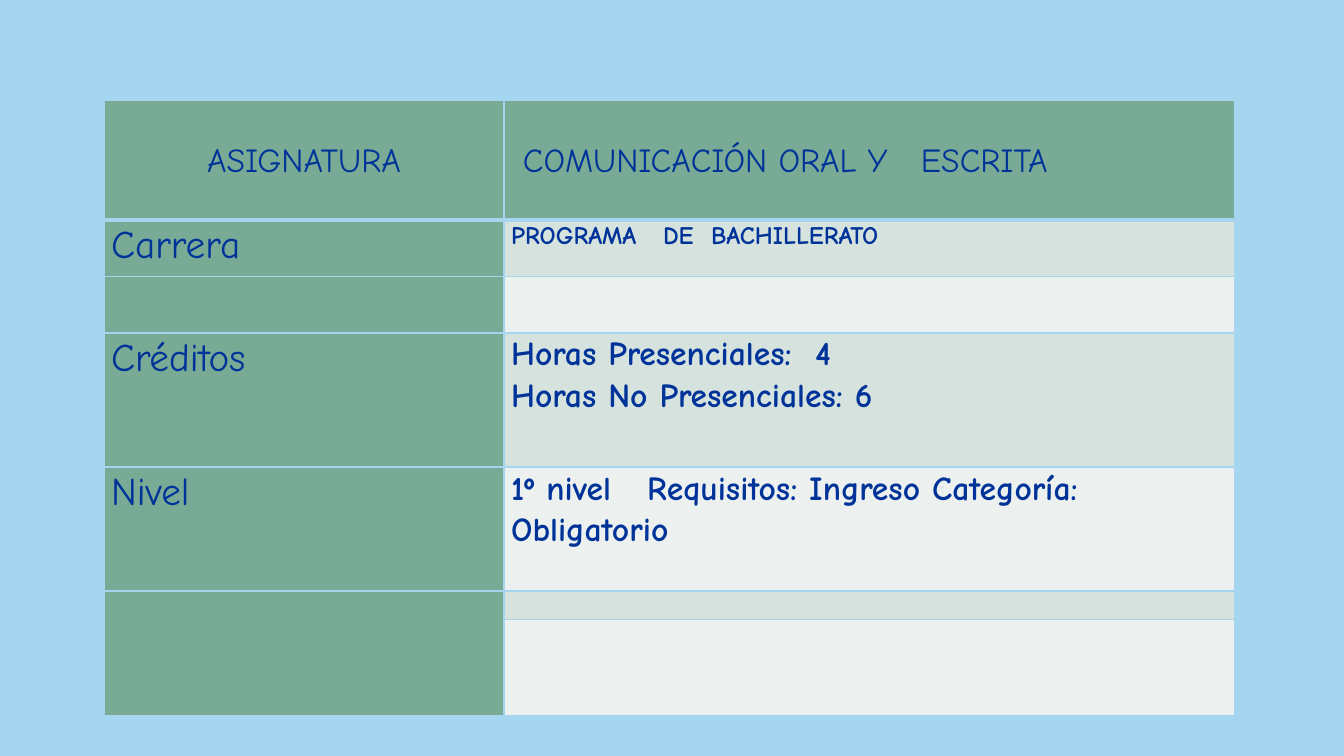
"""Build the course data slide with its two-column table."""
from dataclasses import dataclass
from lxml.etree import SubElement
from pptx import Presentation
from pptx.dml.color import RGBColor
from pptx.enum.text import MSO_ANCHOR, PP_ALIGN
from pptx.oxml import parse_xml
from pptx.oxml.ns import nsdecls, qn
from pptx.util import Cm, Pt

HEAD = ("ASIGNATURA", "COMUNICACIÓN ORAL Y\tESCRITA")
ROWS = [
    ("Carrera", ["PROGRAMA\tDE\tBACHILLERATO"]),
    ("", []),
    ("Créditos", ["Horas Presenciales:\t4", "Horas No Presenciales: 6"]),
    ("Nivel", ["1º nivel\tRequisitos: Ingreso Categoría: Obligatorio"]),
    ("", []),
    ("", []),
]
TABS = {
    HEAD[1]: [10.03],
    ROWS[0][1][0]: [3.83, 5.04],
    ROWS[2][1][0]: [7.66],
    ROWS[3][1][0]: [3.43],
}
WIDTHS = [10.08, 18.42]
HEIGHTS = [3.02, 1.43, 1.42, 3.38, 3.12, 0.73, 2.42]
LEFT, TOP = 2.62, 2.52
PAD, INDENT = 0.18, 0.48


@dataclass(frozen=True)
class Theme:
    """Colours, font and type sizes."""
    sky: str = "A5D5EF"
    green: str = "78AA95"
    bands: tuple = ("D6E2DD", "ECF1EF")
    ink: str = "003399"
    font: str = "Comic Neue"
    label: int = 28
    body: int = 24
    small: int = 18
    empty: int = 10
    leading: float = 1.07


THEME = Theme()


def rule(cell, base):
    """Draw the four cell borders, with the given bottom width."""
    props = cell._tc.get_or_add_tcPr()
    for spot, side in enumerate("LRTB"):
        width = Pt(base if side == "B" else 1)
        props.insert(spot, parse_xml(
            f'<a:ln{side} {nsdecls("a")} w="{width}"><a:solidFill>'
            f'<a:srgbClr val="{THEME.sky}"/></a:solidFill></a:ln{side}>'))


def write(cell, lines, size, bold, align=PP_ALIGN.LEFT):
    """Write one styled run per paragraph."""
    frame = cell.text_frame
    for spot, line in enumerate(lines):
        para = frame.add_paragraph() if spot else frame.paragraphs[0]
        para.alignment = align
        para.line_spacing = THEME.leading
        if line in TABS:
            stops = SubElement(para._p.get_or_add_pPr(), qn("a:tabLst"))
            for stop in TABS[line]:
                SubElement(stops, qn("a:tab"), pos=str(Cm(stop)), algn="l")
        run = para.add_run()
        run.text = line
        font = run.font
        font.name, font.size, font.bold = THEME.font, Pt(size), bold
        font.color.rgb = RGBColor.from_string(THEME.ink)
    if not lines:
        SubElement(frame.paragraphs[0]._p, qn("a:endParaRPr"),
                   sz=str(THEME.empty * 100))


def dress(cell, fill, base=1):
    """Set margins, fill and borders of a cell."""
    cell.margin_left = cell.margin_right = Cm(PAD)
    cell.margin_top = cell.margin_bottom = Cm(0)
    cell.fill.solid()
    cell.fill.fore_color.rgb = RGBColor.from_string(fill)
    rule(cell, base)


def main():
    """Make the deck and save it."""
    deck = Presentation()
    deck.slide_width, deck.slide_height = Cm(33.87), Cm(19.05)
    slide = deck.slides.add_slide(deck.slide_layouts[6])
    back = slide.background.fill
    back.solid()
    back.fore_color.rgb = RGBColor.from_string(THEME.sky)

    grid = slide.shapes.add_table(
        len(HEIGHTS), len(WIDTHS), Cm(LEFT), Cm(TOP),
        Cm(sum(WIDTHS)), Cm(sum(HEIGHTS))).table
    for col, width in zip(grid.columns, WIDTHS):
        col.width = Cm(width)
    for row, height in zip(grid.rows, HEIGHTS):
        row.height = Cm(height)

    for col, text in enumerate(HEAD):
        cell = grid.cell(0, col)
        dress(cell, THEME.green, 3)
        cell.vertical_anchor = MSO_ANCHOR.MIDDLE
        align = PP_ALIGN.LEFT if col else PP_ALIGN.CENTER
        write(cell, [text], THEME.body, False, align)
    grid.cell(0, 1).margin_left = Cm(INDENT)

    for row, (label, lines) in enumerate(ROWS, 1):
        name, data = grid.cell(row, 0), grid.cell(row, 1)
        dress(name, THEME.green)
        dress(data, THEME.bands[(row - 1) % 2])
        write(name, [label] if label else [], THEME.label, False)
        write(data, lines, THEME.small if row == 1 else THEME.body, True)
    last = len(ROWS)
    grid.cell(last - 1, 0).merge(grid.cell(last, 0))
    deck.save("out.pptx")


if __name__ == "__main__":
    main()
